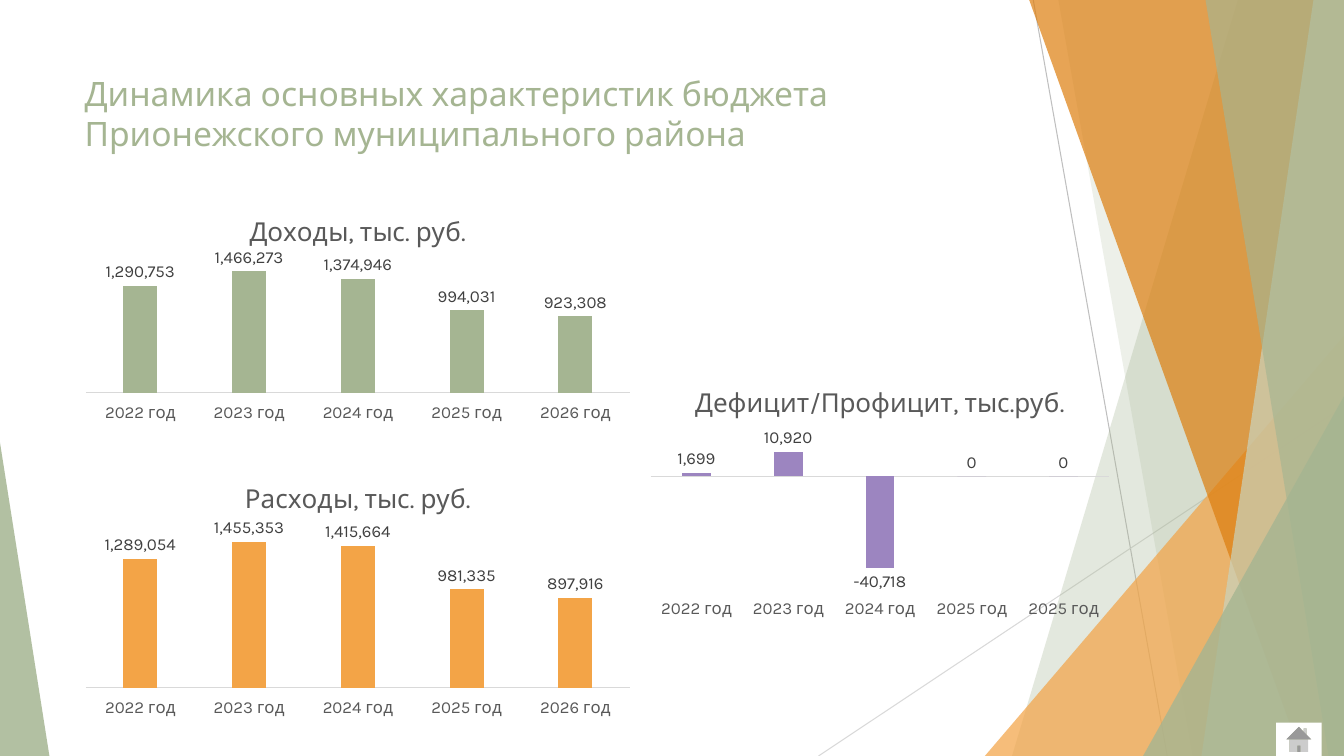
from dataclasses import dataclass

from lxml import etree
from pptx import Presentation
from pptx import util as u
from pptx.chart import data as cd
from pptx.dml import color as col
from pptx.enum import chart as ch, shapes as sh, text as tx
from pptx.oxml import ns

FONT = "Karla"
HUES = {
    "sage": "A5B592", "mist": "C9D3BE", "amber": "F3A447", "rust": "DD7E0E",
    "lilac": "9C85C0", "white": "FFFFFF", "ink": "404040", "gray": "595959",
    "rule": "D9D9D9", "steel": "BFBFBF",
}
WIDE, HIGH = u.Inches(13.333), u.Inches(7.5)


@dataclass
class Box:
    left: float
    top: float
    width: float
    height: float


@dataclass
class Line:
    start: tuple[float, float]
    end: tuple[float, float]
    hue: str


@dataclass
class Band:
    top: float
    foot: float
    hue: str
    alpha: int


@dataclass
class Wedge:
    left: float
    top: float
    width: float
    tip: int
    hue: str
    alpha: int


@dataclass
class Graph:
    title: str
    box: Box
    hue: str
    years: list[int]
    values: list[int]
    low: int
    high: int


LINES = [
    Line((76.88, 0), (86.85, 100), "steel"),
    Line((100, 53.73), (60.9, 100), "rule"),
]
FACETS = [
    Band(92.1, 75.3, "sage", 30),
    Band(78.75, 88.73, "sage", 20),
    Wedge(73.28, 44.4, 26.72, 1, "amber", 72),
    Band(76.58, 96.83, "rust", 70),
    Band(97.73, 89.4, "mist", 70),
    Band(89.7, 98.85, "sage", 65),
    Wedge(85.05, 52.4, 14.95, 1, "sage", 80),
    Wedge(0, 58.53, 3.68, 0, "sage", 85),
]
YEARS = [2022, 2023, 2024, 2025, 2026]
GRAPHS = [
    Graph("Доходы, тыс. руб.", Box(5.55, 26.4, 42.15, 30.13), "sage", YEARS,
          [1290753, 1466273, 1374946, 994031, 923308], 0, 1600000),
    Graph("Расходы, тыс. руб.", Box(5.55, 61.6, 42.15, 34), "amber", YEARS,
          [1289054, 1455353, 1415664, 981335, 897916], 0, 1600000),
    Graph("Дефицит/Профицит, тыс.руб.", Box(47.7, 48.93, 35.55, 33.6), "lilac",
          YEARS[:4] + [2025], [1699, 10920, -40718, 0, 0], -50000, 20000),
]


def across(share: float) -> int:
    return round(WIDE * share / 100)


def down(share: float) -> int:
    return round(HIGH * share / 100)


def frame(box: Box) -> tuple[int, int, int, int]:
    return across(box.left), down(box.top), across(box.width), down(box.height)


def tint(name: str) -> col.RGBColor:
    return col.RGBColor.from_string(HUES[name])


def style(font, size: float, hue: str) -> None:
    font.name, font.size, font.bold = FONT, u.Pt(size), False
    font.color.rgb = tint(hue)


def paint(shape, hue: str, alpha: int = 100) -> None:
    shape.shadow.inherit = False
    shape.line.fill.background()
    shape.fill.solid()
    shape.fill.fore_color.rgb = tint(hue)
    if alpha < 100:
        tone = shape.fill._xPr.find(".//" + ns.qn("a:srgbClr"))
        etree.SubElement(tone, ns.qn("a:alpha"), val=str(alpha * 1000))


def draw_line(slide, line: Line) -> None:
    (left, top), (right, foot) = line.start, line.end
    link = slide.shapes.add_connector(
        sh.MSO_CONNECTOR.STRAIGHT, across(left), down(top), across(right), down(foot))
    link.line.color.rgb = tint(line.hue)
    link.line.width = u.Pt(0.75)
    etree.SubElement(link._element.spPr, ns.qn("a:effectLst"))


def draw_facet(slide, facet: Band | Wedge) -> None:
    if isinstance(facet, Band):
        pen = slide.shapes.build_freeform(across(facet.top), 0)
        pen.add_line_segments([(WIDE, 0), (WIDE, HIGH), (across(facet.foot), HIGH)])
        shape = pen.convert_to_shape()
    else:
        box = Box(facet.left, facet.top, facet.width, 100 - facet.top)
        shape = slide.shapes.add_shape(sh.MSO_SHAPE.ISOSCELES_TRIANGLE, *frame(box))
        shape.adjustments[0] = facet.tip
    paint(shape, facet.hue, facet.alpha)


def draw_title(slide, words: str, box: Box) -> None:
    body = slide.shapes.add_textbox(*frame(box)).text_frame
    body.word_wrap = True
    body.vertical_anchor = tx.MSO_ANCHOR.TOP
    body.text = words
    style(body.paragraphs[0].font, 24, "sage")


def draw_graph(slide, graph: Graph) -> None:
    data = cd.CategoryChartData(number_format="#,##0")
    data.categories = [f"{year} год" for year in graph.years]
    data.add_series(graph.title, graph.values)
    chart = slide.shapes.add_chart(
        ch.XL_CHART_TYPE.COLUMN_CLUSTERED, *frame(graph.box), data).chart
    style(chart.font, 12, "gray")
    chart.has_legend = False
    chart.has_title = True
    head = chart.chart_title.text_frame
    head.text = graph.title
    style(head.paragraphs[0].font, 18.6, "gray")

    base = chart.category_axis
    base.major_tick_mark = ch.XL_TICK_MARK.NONE
    base.tick_label_position = ch.XL_TICK_LABEL_POSITION.LOW
    base.format.line.color.rgb = tint("rule")
    base.format.line.width = u.Pt(0.75)
    style(base.tick_labels.font, 12, "gray")
    scale = chart.value_axis
    scale.visible = False
    scale.has_major_gridlines = False
    scale.minimum_scale, scale.maximum_scale = graph.low, graph.high

    plot = chart.plots[0]
    plot.gap_width, plot.overlap, plot.vary_by_categories = 219, -27, False
    bars = plot.series[0]
    bars.invert_if_negative = False
    bars.format.fill.solid()
    bars.format.fill.fore_color.rgb = tint(graph.hue)
    tags = bars.data_labels
    tags.show_value = True
    tags.position = ch.XL_LABEL_POSITION.OUTSIDE_END
    tags.number_format, tags.number_format_is_linked = "#,##0", False
    style(tags.font, 12, "ink")


def main() -> None:
    deck = Presentation()
    deck.slide_width, deck.slide_height = WIDE, HIGH
    slide = deck.slides.add_slide(deck.slide_layouts[6])
    for line in LINES:
        draw_line(slide, line)
    for facet in FACETS:
        draw_facet(slide, facet)
    draw_title(slide, "Динамика основных характеристик бюджета Прионежского муниципального района",
               Box(5.55, 8.93, 70.5, 12.13))
    home = slide.shapes.add_shape(
        sh.MSO_SHAPE.ACTION_BUTTON_HOME, *frame(Box(94.95, 95.6, 3.38, 4.4)))
    paint(home, "white")
    for graph in GRAPHS:
        draw_graph(slide, graph)
    deck.save("out.pptx")


if __name__ == "__main__":
    main()
